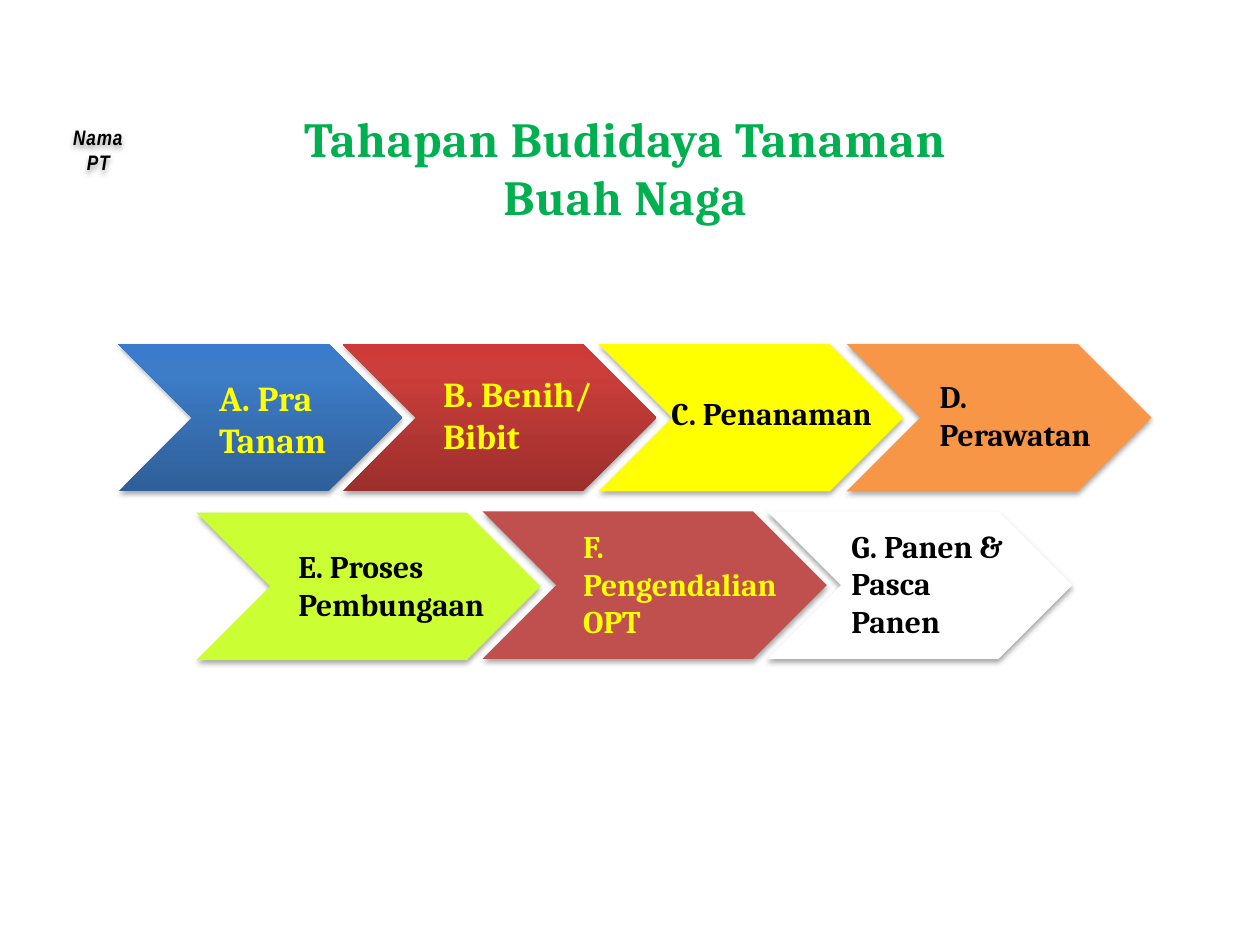
from copy import deepcopy

from lxml import etree
from pptx import Presentation
from pptx.dml.color import RGBColor
from pptx.enum import shapes, text
from pptx.oxml import ns
from pptx.util import Pt

BLACK = RGBColor(0x00, 0x00, 0x00)
WHITE = RGBColor(0xFF, 0xFF, 0xFF)
GREEN = RGBColor(0x00, 0xB0, 0x50)
YELLOW = RGBColor(0xFF, 0xFF, 0x00)
ORANGE = RGBColor(0xF7, 0x96, 0x46)
LIME = RGBColor(0xCC, 0xFF, 0x33)
RED = RGBColor(0xC0, 0x50, 0x4D)
BLUE_STOPS = [
    (0, RGBColor(0x2F, 0x5F, 0x99)),
    (0.8, RGBColor(0x3D, 0x7C, 0xC7)),
    (1, RGBColor(0x3A, 0x7C, 0xCB)),
]
RED_STOPS = [
    (0, RGBColor(0x9C, 0x2F, 0x2D)),
    (0.8, RGBColor(0xCB, 0x3E, 0x3A)),
    (1, RGBColor(0xCE, 0x3B, 0x37)),
]

CHEVRON_HEIGHT = 84.2
TOP_ROW = 196.6
BOTTOM_ROW = 292.3

STAGES = [
    ((67.7, TOP_ROW, 162), BLUE_STOPS,
     (118.1, 213.8, 112.3, 50.4), ["A. Pra", "Tanam"], 20, YELLOW),
    ((195.8, TOP_ROW, 179.3), RED_STOPS,
     (246.2, 211.7, 106.6, 50.4), ["B. Benih/", "Bibit"], 20, YELLOW),
    ((342, TOP_ROW, 174.2), YELLOW,
     (376.6, 211, 135.4, 50.4), ["C. Penanaman"], 18, BLACK),
    ((483.8, TOP_ROW, 174.2), ORANGE,
     (529.9, 203.8, 111.6, 66.2), ["D. Perawatan"], 18, BLACK),
    ((275.8, BOTTOM_ROW, 196.6), RED,
     (326.2, 308.2, 129.6, 50.4), ["F. Pengendalian OPT"], 18, YELLOW),
    ((438.5, BOTTOM_ROW, 174.2), WHITE,
     (479.5, 300.2, 103, 66.2), ["G. Panen &", "Pasca Panen"], 18, BLACK),
    ((112.3, BOTTOM_ROW + 0.7, 196.6), LIME,
     (163.4, 308.9, 129.6, 50.4), ["E. Proses Pembungaan"], 18, BLACK),
]


def add_shadow(shape):
    shape.shadow.inherit = False
    effects = shape._element.spPr.find(ns.qn("a:effectLst"))
    shadow = etree.SubElement(
        effects, ns.qn("a:outerShdw"), blurRad=str(Pt(3.1)),
        dist=str(Pt(1.8)), dir="5400000", rotWithShape="0")
    color = etree.SubElement(shadow, ns.qn("a:srgbClr"), val=str(BLACK))
    etree.SubElement(color, ns.qn("a:alpha"), val="35000")


def fill_gradient(shape, stops):
    shape.fill.gradient()
    shape.fill.gradient_angle = 90
    stop_list = shape._element.spPr.find(".//" + ns.qn("a:gsLst"))
    stop_list.append(deepcopy(stop_list[-1]))
    for stop, (position, color) in zip(shape.fill.gradient_stops, stops):
        stop.position = position
        stop.color.rgb = color


def write_lines(shape, lines, font_name, size, color, alignment,
                anchor=text.MSO_ANCHOR.MIDDLE, italic=False, spacing=0):
    frame = shape.text_frame
    frame.word_wrap = True
    frame.vertical_anchor = anchor
    frame.text = "\n".join(lines)
    for paragraph in frame.paragraphs:
        paragraph.alignment = alignment
        font = paragraph.font
        font.name = font_name
        font.size = Pt(size)
        font.bold = True
        font.italic = italic
        font.color.rgb = color
        if spacing:
            for run in paragraph.runs:
                run.font._element.set("spc", str(spacing))


def add_text(slide, box, lines, *style, **options):
    shape = slide.shapes.add_textbox(*map(Pt, box))
    write_lines(shape, lines, *style, **options)
    return shape


def add_chevron(slide, left, top, width, fill):
    shape = slide.shapes.add_shape(
        shapes.MSO_SHAPE.CHEVRON, Pt(left), Pt(top), Pt(width), Pt(CHEVRON_HEIGHT))
    if isinstance(fill, list):
        fill_gradient(shape, fill)
    else:
        shape.fill.solid()
        shape.fill.fore_color.rgb = fill
    shape.line.fill.background()
    add_shadow(shape)


def set_title(slide):
    title = slide.shapes.title
    title.left, title.top, title.width, title.height = map(Pt, (146.2, 50.4, 421.9, 90))
    write_lines(title, ["Tahapan Budidaya Tanaman", "Buah Naga"], "Cambria", 28,
                GREEN, text.PP_ALIGN.CENTER, spacing=50)


def main():
    presentation = Presentation()
    presentation.slide_width = Pt(720)
    presentation.slide_height = Pt(540)
    slide = presentation.slides.add_slide(presentation.slide_layouts[5])

    company = add_text(slide, (28.1, 67.7, 56.2, 21.6), ["Nama PT"], "Arial Narrow", 12,
                       BLACK, text.PP_ALIGN.CENTER, anchor=text.MSO_ANCHOR.TOP,
                       italic=True, spacing=50)
    add_shadow(company)
    set_title(slide)
    for chevron, fill, box, lines, size, color in STAGES:
        add_chevron(slide, *chevron, fill)
        add_text(slide, box, lines, "Cambria", size, color, text.PP_ALIGN.LEFT)

    presentation.save("out.pptx")


if __name__ == "__main__":
    main()
